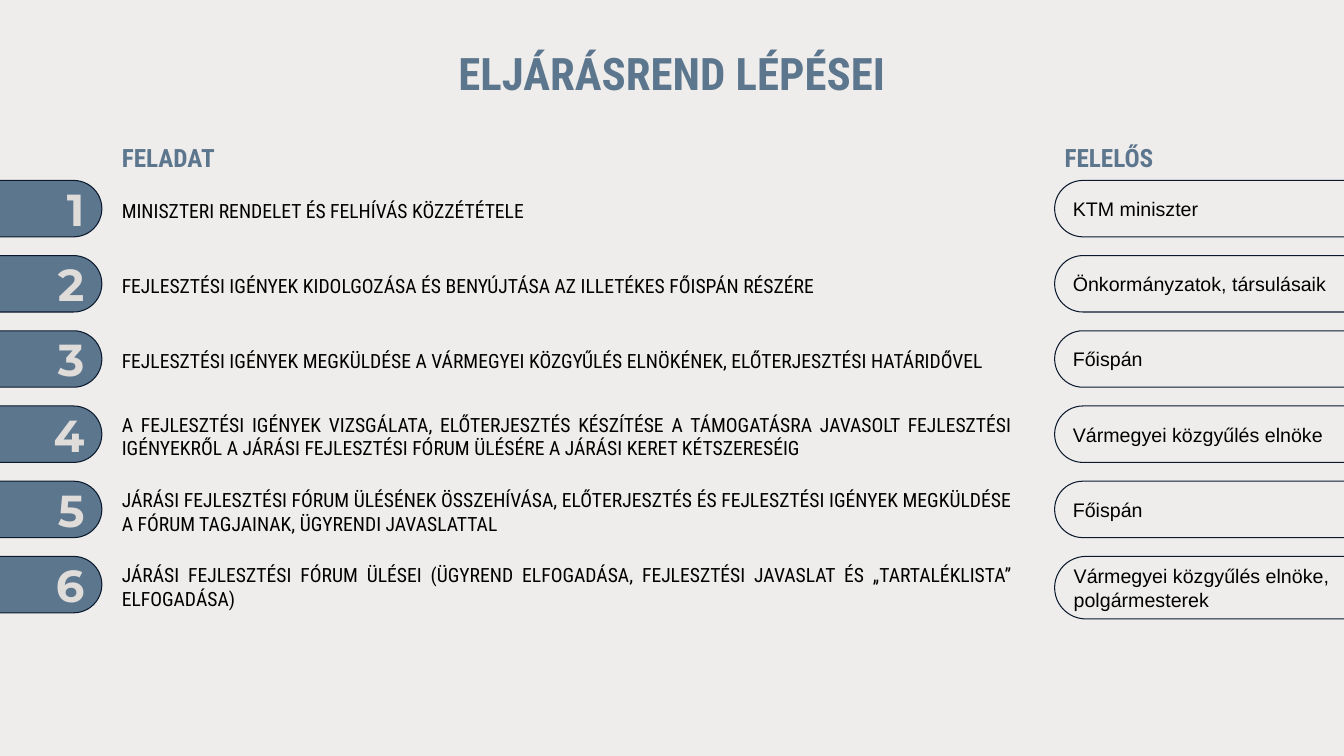
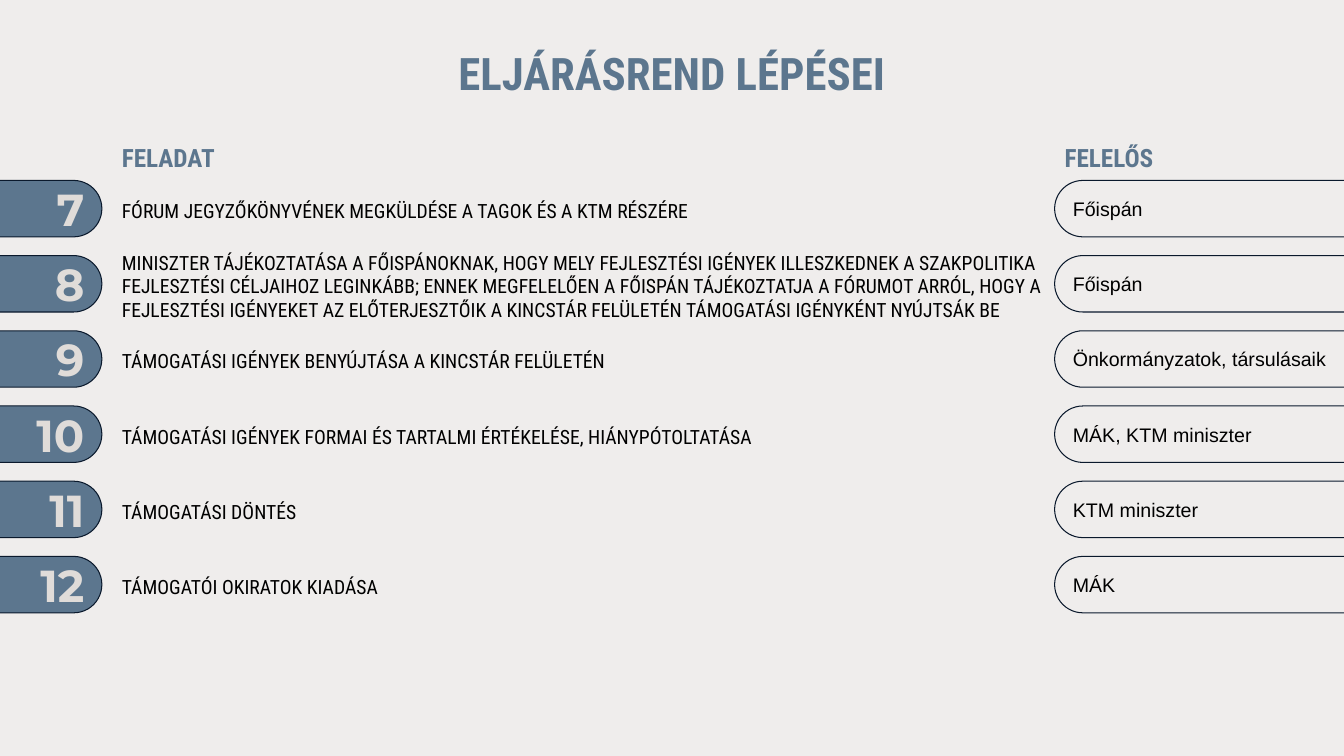
from dataclasses import dataclass

from pptx import Presentation
from pptx.dml.color import RGBColor
from pptx.enum.shapes import MSO_SHAPE
from pptx.enum.text import MSO_ANCHOR, MSO_AUTO_SIZE, PP_ALIGN
from pptx.util import Inches, Pt

PILL = MSO_SHAPE.ROUNDED_RECTANGLE
TOP, MIDDLE = MSO_ANCHOR.TOP, MSO_ANCHOR.MIDDLE
LEFT, CENTER, RIGHT, JUSTIFY = (
    PP_ALIGN.LEFT, PP_ALIGN.CENTER, PP_ALIGN.RIGHT, PP_ALIGN.JUSTIFY)
TITLE_ONLY = 5


@dataclass(frozen=True)
class TextStyle:
    font: str
    size: int
    color: str
    bold: bool = False


class Theme:
    background = "EFEDEC"
    accent = "5C768E"
    outline = "0A192C"
    line_width = 0.75
    title = TextStyle("Roboto Condensed", 32, accent, True)
    heading = TextStyle("Roboto Condensed", 18, accent, True)
    number = TextStyle("Montserrat", 32, "E0DCD9", True)
    task = TextStyle("Roboto Condensed", 14, "000000")
    owner = TextStyle("Arial", 14, "000000")


class Grid:
    """Columns as (left, width) and rows of equal pitch, in inches."""
    width, height = 13.33, 7.5
    badge = (-0.38, 1.39)
    task = (1.11, 9.03)
    wide_task = (1.11, 9.42)
    owner = (10.46, 3.38)
    first_row, last_row, row_count = 1.79, 5.52, 6
    pitch = (last_row - first_row) / (row_count - 1)
    pill_height = 0.56
    heading_top, heading_width, heading_height = 1.36, 1.54, 0.4
    title_top, title_height = 0.4, 1.06

    @classmethod
    def row_top(cls, row):
        return cls.first_row + row * cls.pitch


@dataclass(frozen=True)
class Step:
    task: str
    owner: str
    align: PP_ALIGN = LEFT
    column: tuple = Grid.task
    owner_height: float = Grid.pill_height


class Deck:
    def __init__(self):
        self.prs = Presentation()
        self.prs.slide_width = Inches(Grid.width)
        self.prs.slide_height = Inches(Grid.height)
        fill = self.prs.slide_master.background.fill
        fill.solid()
        fill.fore_color.rgb = RGBColor.from_string(Theme.background)
        self.s = None

    def set_text(self, sp, text, style, align=LEFT, anchor=MIDDLE,
                 right=0.1, vertical=0):
        tf = sp.text_frame
        tf.word_wrap = True
        tf.auto_size = MSO_AUTO_SIZE.NONE
        tf.vertical_anchor = anchor
        tf.margin_left, tf.margin_right = Inches(0.1), Inches(right)
        tf.margin_top = tf.margin_bottom = Inches(vertical)
        tf.text = text
        p = tf.paragraphs[0]
        p.alignment = align
        p.font.name = style.font
        p.font.size = Pt(style.size)
        p.font.bold = style.bold
        p.font.color.rgb = RGBColor.from_string(style.color)

    def add_slide(self, title):
        self.s = self.prs.slides.add_slide(self.prs.slide_layouts[TITLE_ONLY])
        sp = self.s.shapes.title
        sp.left, sp.top = 0, Inches(Grid.title_top)
        sp.width, sp.height = Inches(Grid.width), Inches(Grid.title_height)
        self.set_text(sp, title, Theme.title, CENTER, TOP, vertical=0.05)

    def text(self, box, text, style, align=LEFT):
        sp = self.s.shapes.add_textbox(*map(Inches, box))
        self.set_text(sp, text, style, align)

    def heading(self, column, text):
        self.text((column[0], Grid.heading_top, Grid.heading_width,
                   Grid.heading_height), text, Theme.heading)

    def pill(self, column, row, text, style, align, right,
             fill=None, height=Grid.pill_height):
        left, width = column
        sp = self.s.shapes.add_shape(
            PILL, *map(Inches, (left, Grid.row_top(row), width, height)))
        sp.adjustments[0] = 0.5
        sp.shadow.inherit = False
        if fill:
            sp.fill.solid()
            sp.fill.fore_color.rgb = RGBColor.from_string(fill)
        else:
            sp.fill.background()
        sp.line.color.rgb = RGBColor.from_string(Theme.outline)
        sp.line.width = Pt(Theme.line_width)
        self.set_text(sp, text, style, align, right=right)

    def step(self, row, number, step):
        self.pill(Grid.badge, row, str(number), Theme.number, RIGHT, 0.09,
                  fill=Theme.accent)
        left, width = step.column
        top = Grid.row_top(row) - (Grid.pitch - Grid.pill_height) / 2
        self.text((left, top + 0.02, width, Grid.pitch),
                  step.task, Theme.task, step.align)
        self.pill(Grid.owner, row, step.owner, Theme.owner, LEFT, 0.52,
                  height=step.owner_height)

    def steps_slide(self, first_number, steps):
        self.add_slide("ELJÁRÁSREND LÉPÉSEI")
        self.heading(Grid.task, "FELADAT")
        self.heading(Grid.owner, "FELELŐS")
        for row, step in enumerate(steps):
            self.step(row, first_number + row, step)


PREPARATION = [
    Step("MINISZTERI RENDELET ÉS FELHÍVÁS KÖZZÉTÉTELE", "KTM miniszter"),
    Step("FEJLESZTÉSI IGÉNYEK KIDOLGOZÁSA ÉS BENYÚJTÁSA AZ ILLETÉKES "
         "FŐISPÁN RÉSZÉRE", "Önkormányzatok, társulásaik"),
    Step("FEJLESZTÉSI IGÉNYEK MEGKÜLDÉSE A VÁRMEGYEI KÖZGYŰLÉS ELNÖKÉNEK, "
         "ELŐTERJESZTÉSI HATÁRIDŐVEL", "Főispán"),
    Step("A FEJLESZTÉSI IGÉNYEK VIZSGÁLATA, ELŐTERJESZTÉS KÉSZÍTÉSE A "
         "TÁMOGATÁSRA JAVASOLT FEJLESZTÉSI IGÉNYEKRŐL A JÁRÁSI FEJLESZTÉSI "
         "FÓRUM ÜLÉSÉRE A JÁRÁSI KERET KÉTSZERESÉIG",
         "Vármegyei közgyűlés elnöke", JUSTIFY),
    Step("JÁRÁSI FEJLESZTÉSI FÓRUM ÜLÉSÉNEK ÖSSZEHÍVÁSA, ELŐTERJESZTÉS ÉS "
         "FEJLESZTÉSI IGÉNYEK MEGKÜLDÉSE A FÓRUM TAGJAINAK, ÜGYRENDI "
         "JAVASLATTAL", "Főispán", JUSTIFY),
    Step("JÁRÁSI FEJLESZTÉSI FÓRUM ÜLÉSEI (ÜGYREND ELFOGADÁSA, FEJLESZTÉSI "
         "JAVASLAT ÉS „TARTALÉKLISTA” ELFOGADÁSA)",
         "Vármegyei közgyűlés elnöke, polgármesterek", JUSTIFY,
         owner_height=0.62),
]

DECISION = [
    Step("FÓRUM JEGYZŐKÖNYVÉNEK MEGKÜLDÉSE A TAGOK ÉS A KTM RÉSZÉRE",
         "Főispán"),
    Step("MINISZTER TÁJÉKOZTATÁSA A FŐISPÁNOKNAK, HOGY MELY FEJLESZTÉSI "
         "IGÉNYEK ILLESZKEDNEK A SZAKPOLITIKA FEJLESZTÉSI CÉLJAIHOZ "
         "LEGINKÁBB; ENNEK MEGFELELŐEN A FŐISPÁN TÁJÉKOZTATJA A FÓRUMOT "
         "ARRÓL, HOGY A FEJLESZTÉSI IGÉNYEKET AZ ELŐTERJESZTŐIK A KINCSTÁR "
         "FELÜLETÉN TÁMOGATÁSI IGÉNYKÉNT NYÚJTSÁK BE",
         "Főispán", column=Grid.wide_task),
    Step("TÁMOGATÁSI IGÉNYEK BENYÚJTÁSA A KINCSTÁR FELÜLETÉN",
         "Önkormányzatok, társulásaik"),
    Step("TÁMOGATÁSI IGÉNYEK FORMAI ÉS TARTALMI ÉRTÉKELÉSE, "
         "HIÁNYPÓTOLTATÁSA", "MÁK, KTM miniszter"),
    Step("TÁMOGATÁSI DÖNTÉS", "KTM miniszter"),
    Step("TÁMOGATÓI OKIRATOK KIADÁSA", "MÁK"),
]


def main():
    deck = Deck()
    deck.steps_slide(1, PREPARATION)
    deck.steps_slide(1 + len(PREPARATION), DECISION)
    deck.prs.save("out.pptx")


if __name__ == "__main__":
    main()
